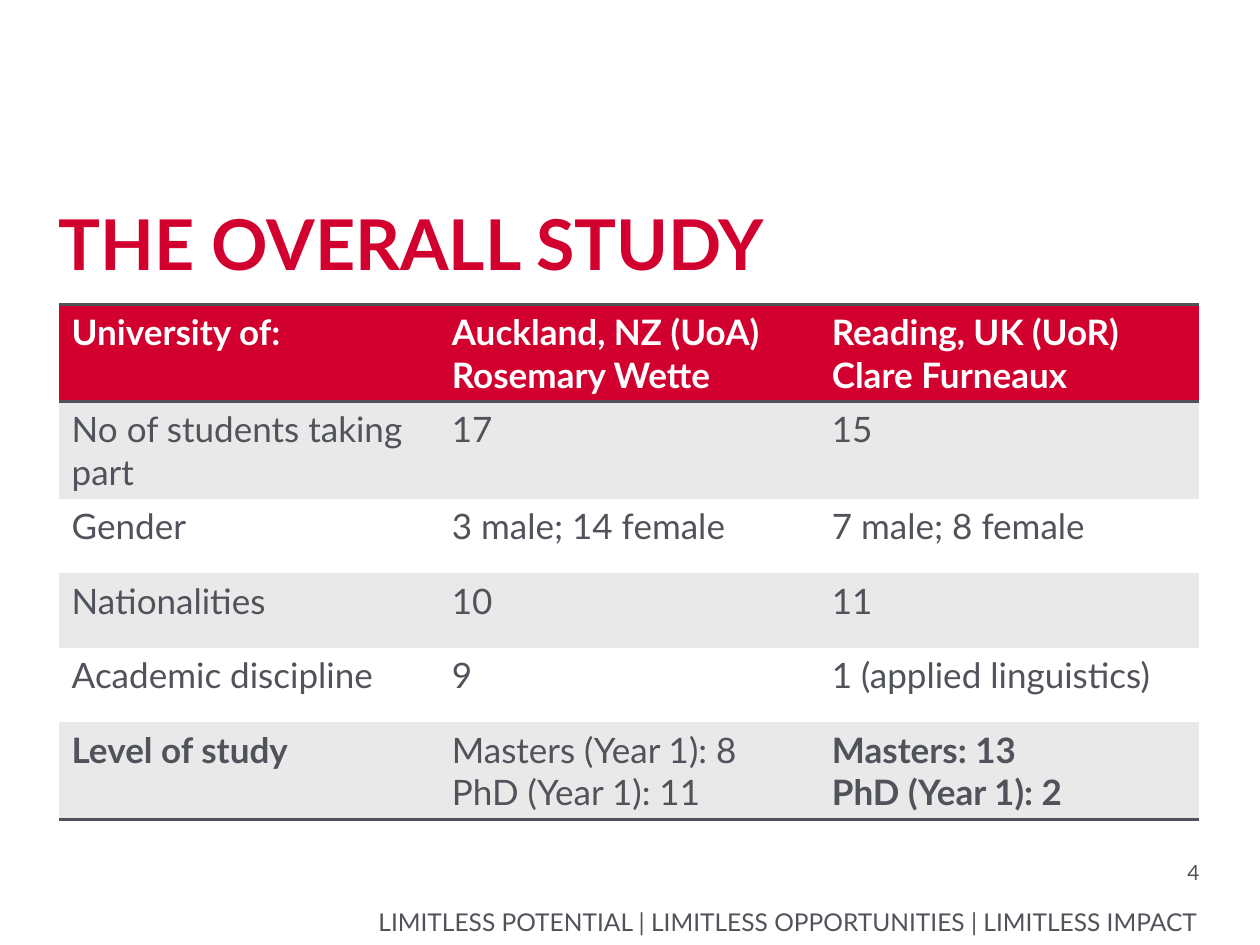
from lxml import etree
from pptx import Presentation
from pptx.dml.color import RGBColor
from pptx.enum.text import MSO_ANCHOR, PP_ALIGN
from pptx.oxml.ns import qn
from pptx.util import Pt

LEFT, RIGHT = PP_ALIGN.LEFT, PP_ALIGN.RIGHT
TOP, BOTTOM = MSO_ANCHOR.TOP, MSO_ANCHOR.BOTTOM
RED = RGBColor(0xD2, 0x00, 0x2E)
GREY = RGBColor(0x50, 0x53, 0x5A)
BAND = RGBColor(0xE9, 0xE9, 0xEA)
WHITE = RGBColor(0xFF, 0xFF, 0xFF)
FONT = "Lato"

TITLE = "THE OVERALL STUDY"
FOOTER = "LIMITLESS POTENTIAL | LIMITLESS OPPORTUNITIES | LIMITLESS IMPACT"
PAGE = "4"
ROWS = [
    ["University of:", "Auckland, NZ (UoA)\nRosemary Wette", "Reading, UK (UoR)\nClare Furneaux"],
    ["No of students taking part", "17", "15"],
    ["Gender", "3 male; 14 female", "7 male; 8 female"],
    ["Nationalities", "10", "11"],
    ["Academic discipline", "9", "1 (applied linguistics)"],
    ["Level of study", "Masters (Year 1): 8\nPhD (Year 1): 11", "Masters: 13\nPhD (Year 1): 2"],
]
LAST = len(ROWS) - 1
BOLD_CELLS = {(0, 0), (0, 1), (0, 2), (LAST, 0), (LAST, 2)}
RULED_EDGES = {0, 1, LAST + 1}  # row edges that carry a rule, counted from the top

TABLE_LEFT, TABLE_TOP, TABLE_WIDTH = 33.8, 174.2, 651.6
HEADER_HEIGHT, ROW_HEIGHT = 33.1, 42.5


def write(tf, text, size, color, bold=False, align=LEFT):
    for i, line in enumerate(text.split("\n")):
        p = tf.add_paragraph() if i else tf.paragraphs[0]
        p.alignment = align
        r = p.add_run()
        r.text = line
        r.font.name, r.font.size, r.font.bold = FONT, Pt(size), bold
        r.font.color.rgb = color


def set_frame(tf, anchor):
    tf.margin_left = tf.margin_right = tf.margin_top = tf.margin_bottom = 0
    tf.vertical_anchor = anchor
    tf.word_wrap = True


def add_label(slide, box, text, size, anchor):
    tf = slide.shapes.add_textbox(*map(Pt, box)).text_frame
    set_frame(tf, anchor)
    write(tf, text, size, GREY, align=RIGHT)


def set_borders(cell, row):
    """Rule the ruled row edges and clear every other side; call before filling."""
    sides = {"lnL": False, "lnR": False, "lnT": row in RULED_EDGES, "lnB": row + 1 in RULED_EDGES}
    tcPr = cell._tc.get_or_add_tcPr()
    for tag, ruled in sides.items():
        ln = etree.SubElement(tcPr, qn("a:" + tag), w=str(Pt(2)))
        if ruled:
            fill = etree.SubElement(ln, qn("a:solidFill"))
            etree.SubElement(fill, qn("a:srgbClr"), val=str(GREY))
        else:
            etree.SubElement(ln, qn("a:noFill"))


def add_study_table(slide):
    height = HEADER_HEIGHT + LAST * ROW_HEIGHT
    table = slide.shapes.add_table(
        len(ROWS), len(ROWS[0]), Pt(TABLE_LEFT), Pt(TABLE_TOP), Pt(TABLE_WIDTH), Pt(height)
    ).table
    for column in table.columns:
        column.width = Pt(TABLE_WIDTH / len(ROWS[0]))
    for i, row in enumerate(ROWS):
        table.rows[i].height = Pt(ROW_HEIGHT if i else HEADER_HEIGHT)
        fill = RED if i == 0 else BAND if i % 2 else WHITE
        for j, text in enumerate(row):
            cell = table.cell(i, j)
            set_borders(cell, i)
            cell.fill.solid()
            cell.fill.fore_color.rgb = fill
            write(cell.text_frame, text, 20, GREY if i else WHITE, (i, j) in BOLD_CELLS)


def main():
    prs = Presentation()
    prs.slide_width, prs.slide_height = Pt(720), Pt(540)
    slide = prs.slides.add_slide(prs.slide_layouts[5])

    title = slide.shapes.title
    title.left, title.top, title.width, title.height = map(Pt, (33.5, 97.2, 652, 65.5))
    set_frame(title.text_frame, BOTTOM)
    write(title.text_frame, TITLE, 40, RED, bold=True)

    add_study_table(slide)
    add_label(slide, (632, 491, 53.5, 20), PAGE, 12, TOP)
    add_label(slide, (152, 517.7, 532.8, 17.3), FOOTER, 14, BOTTOM)
    prs.save("out.pptx")


if __name__ == "__main__":
    main()
